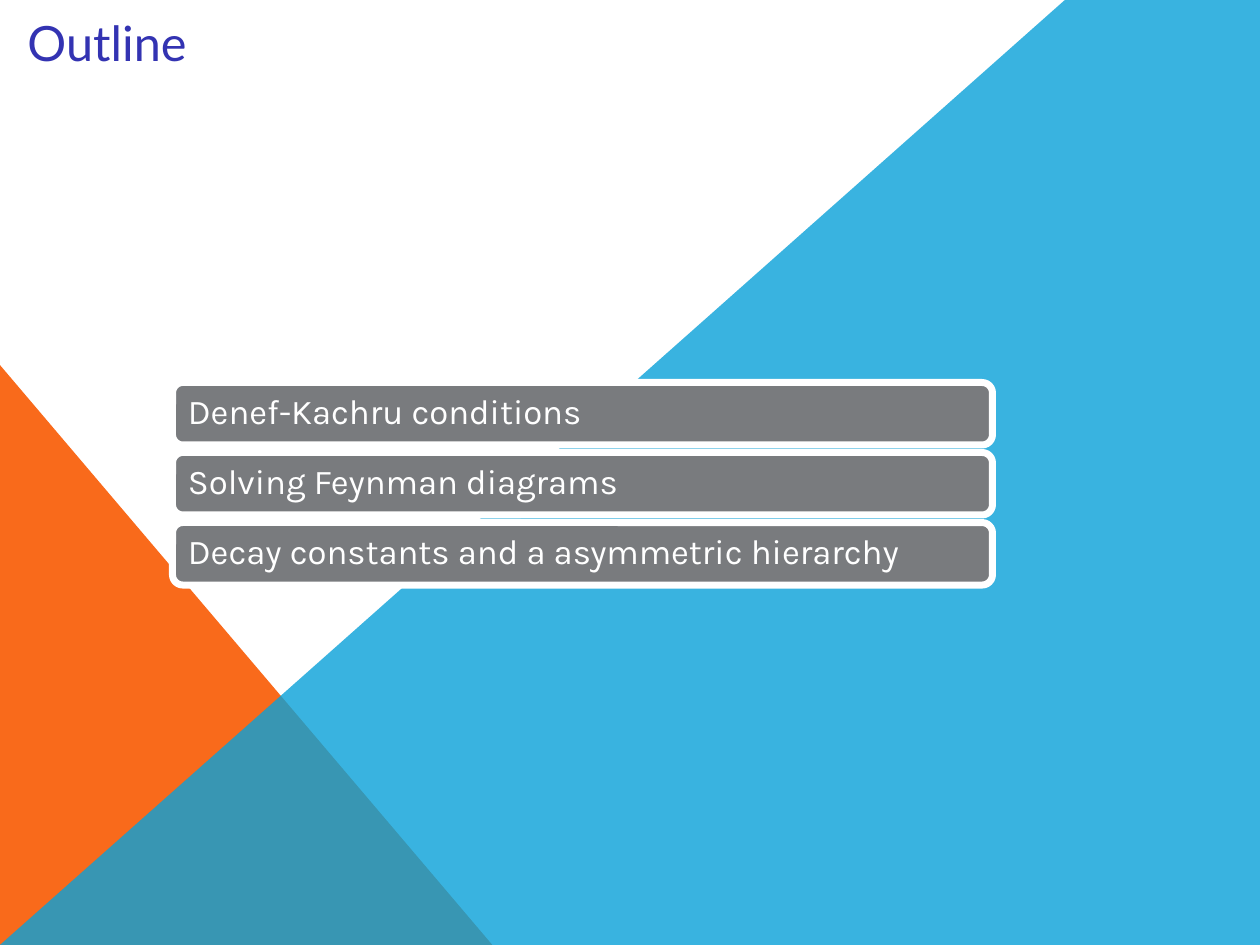
from lxml import etree
from pptx import Presentation
from pptx import util as u
from pptx.dml.color import RGBColor
from pptx.enum import shapes, text
from pptx.oxml import ns

WHITE = RGBColor(0xFF, 0xFF, 0xFF)
ORANGE = RGBColor(0xF9, 0x6A, 0x1B)
BLUE = RGBColor(0x08, 0xA1, 0xD9)
GREY = RGBColor(0x79, 0x7B, 0x7E)
INDIGO = RGBColor(0x33, 0x33, 0xB2)

TOPICS = [
    "Denef-Kachru conditions",
    "Solving Feynman diagrams",
    "Decay constants and a asymmetric hierarchy",
]
BAR_LEFT, BAR_TOP = u.Inches(0.69), u.Inches(1.53)
BAR_WIDTH, BAR_HEIGHT = u.Inches(3.28), u.Inches(0.25)
BAR_PITCH = u.Inches(0.28)

deck = Presentation()
deck.slide_width, deck.slide_height = u.Inches(5.04), u.Inches(3.78)
width, height = deck.slide_width, deck.slide_height
page = deck.slides.add_slide(deck.slide_layouts[5])
page.background.fill.solid()
page.background.fill.fore_color.rgb = WHITE


def paint(shape, color):
    shape.shadow.inherit = False
    shape.fill.solid()
    shape.fill.fore_color.rgb = color
    shape.line.fill.background()


# Background triangles
corner_top = u.Inches(1.46)
corner = page.shapes.add_shape(
    shapes.MSO_SHAPE.RIGHT_TRIANGLE, 0, corner_top, u.Inches(1.97), height - corner_top)
paint(corner, ORANGE)

outline = page.shapes.build_freeform(0, height)
outline.add_line_segments(
    [(u.Inches(4.26), 0), (width, 0), (width, height)], close=True)
wedge = outline.convert_to_shape()
paint(wedge, BLUE)
wedge_color = wedge.fill._xPr.find(".//" + ns.qn("a:srgbClr"))
etree.SubElement(wedge_color, ns.qn("a:alpha"), val="80000")

# Title
title = page.shapes.title
title.left, title.top = u.Inches(0.11), u.Inches(0.12)
title.width, title.height = u.Inches(0.64), u.Inches(0.22)
frame = title.text_frame
frame.text = "Outline"
frame.word_wrap = False
frame.auto_size = text.MSO_AUTO_SIZE.NONE
frame.vertical_anchor = text.MSO_ANCHOR.TOP
frame.margin_left = frame.margin_right = frame.margin_top = 0
frame.margin_bottom = u.Inches(0.05)
para = frame.paragraphs[0]
para.alignment = text.PP_ALIGN.LEFT
para.line_spacing = u.Pt(12)
para.font.name, para.font.size = "Lato", u.Pt(14)
para.font.color.rgb = INDIGO

# Topic bars
for row, topic in enumerate(TOPICS):
    bar = page.shapes.add_shape(
        shapes.MSO_SHAPE.ROUNDED_RECTANGLE,
        BAR_LEFT, BAR_TOP + row * BAR_PITCH, BAR_WIDTH, BAR_HEIGHT)
    paint(bar, GREY)
    bar.line.color.rgb = WHITE
    bar.line.width = u.Pt(2)
    frame = bar.text_frame
    frame.text = topic
    frame.word_wrap = True
    frame.vertical_anchor = text.MSO_ANCHOR.MIDDLE
    frame.margin_left = frame.margin_right = u.Inches(0.05)
    frame.margin_top = frame.margin_bottom = 0
    para = frame.paragraphs[0]
    para.alignment = text.PP_ALIGN.LEFT
    para.line_spacing = 0.9
    para.font.name, para.font.size = "Karla", u.Pt(10)
    para.font.color.rgb = WHITE

deck.save("out.pptx")
